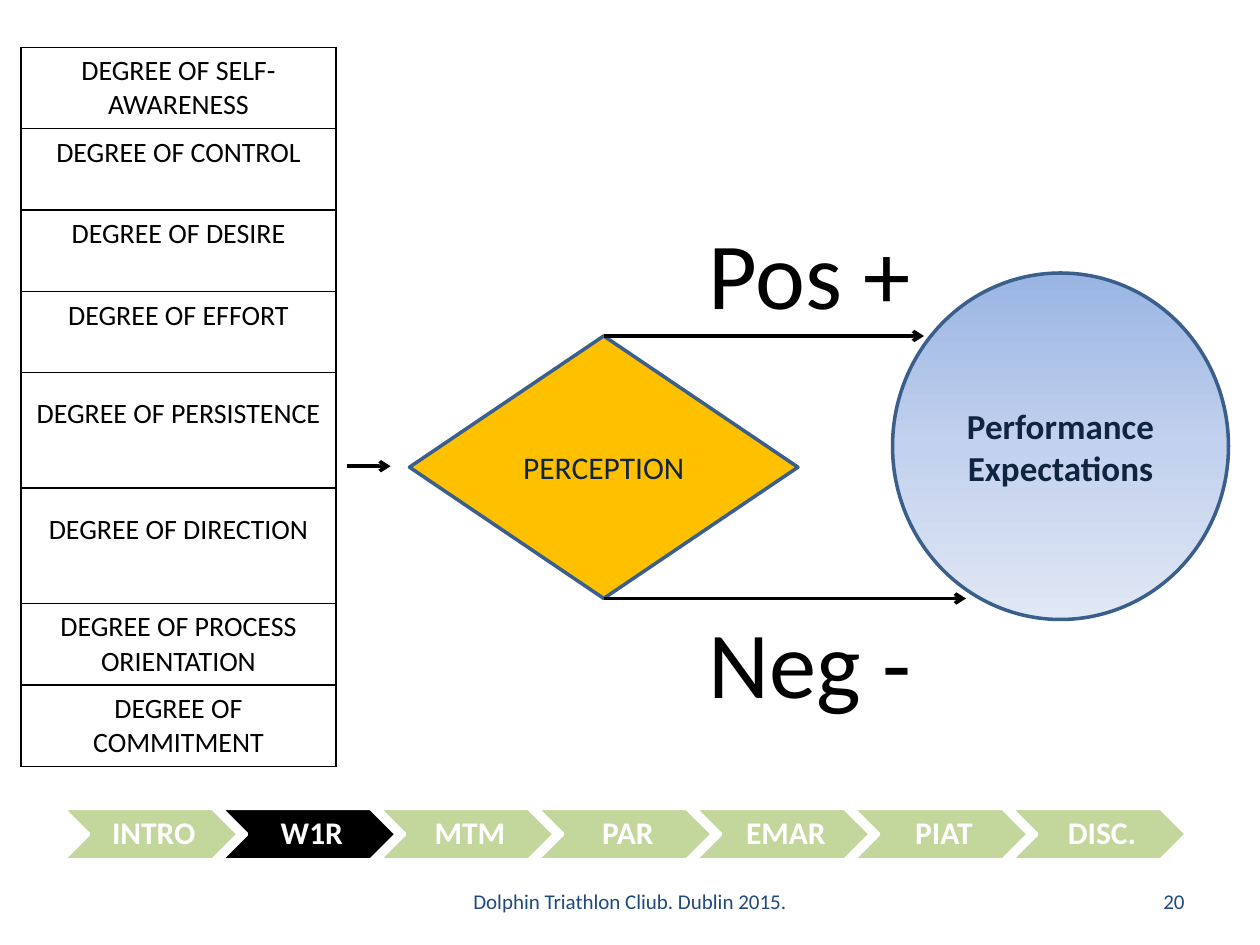
"""Build the perception and performance expectations slide."""
from copy import deepcopy
from lxml.etree import SubElement
from pptx import Presentation
from pptx.dml.color import RGBColor
from pptx.enum.shapes import MSO_CONNECTOR, MSO_SHAPE
from pptx.enum.text import MSO_ANCHOR, PP_ALIGN
from pptx.oxml import parse_xml
from pptx.oxml.ns import nsdecls, qn
from pptx.util import Inches, Pt

rgb = RGBColor.from_string
prs = Presentation()
prs.slide_width, prs.slide_height = Inches(10), Inches(7.5)
s = prs.slides.add_slide(prs.slide_layouts[6])
COL, ROW = prs.slide_width / 120, prs.slide_height / 90


def grid(x, y, w, h):
    return int(x * COL), int(y * ROW), int(w * COL), int(h * ROW)


def write(tf, text, size, color, bold=False, align=PP_ALIGN.CENTER):
    tf.text = text
    p = tf.paragraphs[0]
    p.alignment = align
    f = p.runs[0].font
    f.name, f.size, f.bold, f.color.rgb = "Calibri", Pt(size), bold, rgb(color)
    return p


for x, w, text, align in [
    (41, 38, "Dolphin Triathlon Cliub. Dublin 2015.", PP_ALIGN.CENTER),
    (86, 28, "20", PP_ALIGN.RIGHT),
]:
    tf = s.shapes.add_textbox(*grid(x, 83.4, w, 4.8)).text_frame
    tf.word_wrap = True
    tf.vertical_anchor = MSO_ANCHOR.MIDDLE
    write(tf, text, 12, "1F497D", align=align)

steps = ["INTRO", "W1R", "MTM", "PAR", "EMAR", "PIAT", "DISC."]
shapes = [
    (MSO_SHAPE.OVAL, (85, 26, 32, 33), "9AB5E4", "3A5F8C", "Performance Expectations", 20, "0F243E", True),
    (MSO_SHAPE.FLOWCHART_DECISION, (39, 32, 37, 25), "FFC000", "3A5F8C", "PERCEPTION", 18, "0F243E", False),
] + [
    (MSO_SHAPE.CHEVRON, (6 + 15.05 * i, 77, 16.7, 4.9), "000000" if step == "W1R" else "C3D69B",
     "FFFFFF", step, 18, "FFFFFF", True)
    for i, step in enumerate(steps)
]
for kind, box, fill, line, text, size, color, bold in shapes:
    sp = s.shapes.add_shape(kind, *grid(*box))
    sp.shadow.inherit = False
    sp.line.color.rgb, sp.line.width = rgb(line), Pt(2)
    tf = sp.text_frame
    tf.word_wrap = True
    tf.vertical_anchor = MSO_ANCHOR.MIDDLE
    p = write(tf, text, size, color, bold)
    if kind == MSO_SHAPE.CHEVRON:
        p.line_spacing = 0.9
        tf.margin_left = Inches(0.08)
        tf.margin_right = tf.margin_top = tf.margin_bottom = Inches(0.03)
    if kind == MSO_SHAPE.OVAL:
        sp.fill.gradient()
        sp.fill.gradient_angle = 270
        stops = sp._element.spPr.find(qn("a:gradFill")).find(qn("a:gsLst"))
        stops.insert(1, deepcopy(stops[0]))
        for stop, shade, pos in zip(sp.fill.gradient_stops, [fill, "C2D1ED", "E1E8F5"], [0, 0.5, 1]):
            stop.color.rgb, stop.position = rgb(shade), pos
    else:
        sp.fill.solid()
        sp.fill.fore_color.rgb = rgb(fill)

for x1, x2, y in [(57.5, 88, 32), (57.5, 92, 57), (33, 37.2, 44.4)]:
    x, y, w, h = grid(x1, y, x2 - x1, 0)
    c = s.shapes.add_connector(MSO_CONNECTOR.STRAIGHT, x, y, x + w, y)
    c.line.color.rgb, c.line.width = rgb("000000"), Pt(2)
    SubElement(c.line._get_or_add_ln(), qn("a:tailEnd"), type="arrow")
    SubElement(c._element.spPr, qn("a:effectLst"))

for text, y in [("Pos +", 19.9), ("Neg -", 56.9)]:
    tf = s.shapes.add_textbox(*grid(66.3, y, 21.9, 12.1)).text_frame
    tf.word_wrap = False
    write(tf, text, 54, "000000", align=PP_ALIGN.LEFT)

degrees = ["SELF-AWARENESS", "CONTROL", "DESIRE", "EFFORT", "PERSISTENCE",
           "DIRECTION", "PROCESS ORIENTATION", "COMMITMENT"]
two_line = {"SELF-AWARENESS", "PROCESS ORIENTATION", "COMMITMENT"}
tall = {"PERSISTENCE", "DIRECTION"}
table = s.shapes.add_table(len(degrees), 1, *grid(2, 4.5, 30, 68.5)).table
table.first_row = table.horz_banding = False
for i, degree in enumerate(degrees):
    table.rows[i].height = int((11 if degree in tall else 7.75) * ROW)
    cell = table.cell(i, 0)
    write(cell.text_frame, f"DEGREE OF {degree}", 16, "000000")
    cell.vertical_anchor = MSO_ANCHOR.MIDDLE
    if degree not in two_line:
        cell.margin_bottom = Inches(0.31)
    tcPr = cell._tc.get_or_add_tcPr()
    for side in ["lnL", "lnR", "lnT", "lnB"]:
        tcPr.append(parse_xml(
            f'<a:{side} {nsdecls("a")} w="{Pt(1)}"><a:solidFill><a:srgbClr val="000000"/></a:solidFill></a:{side}>'))
    cell.fill.background()

prs.save("out.pptx")
